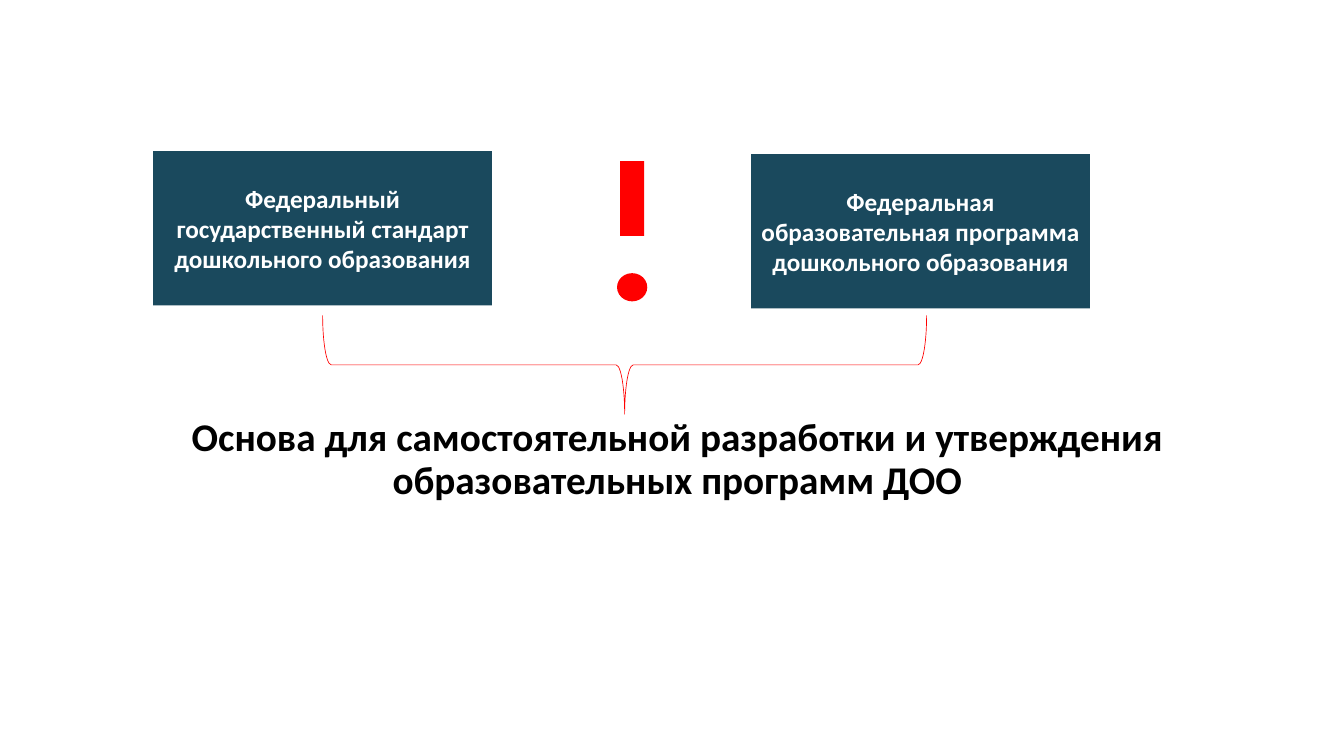
from pptx import Presentation
from pptx.dml.color import RGBColor
from pptx.enum.shapes import MSO_SHAPE as Shape
from pptx.enum.text import MSO_ANCHOR as Anchor, MSO_AUTO_SIZE as AutoSize, PP_ALIGN as Align
from pptx.util import Inches, Pt

# Content
CONCLUSION = ["Основа для самостоятельной разработки и утверждения образовательных программ ДОО"]
DOCUMENTS = [  # left, top, paragraphs
    (1.52, 1.5, ["Федеральный",
                 "государственный стандарт дошкольного образования"]),
    (7.45, 1.53, ["Федеральная",
                  "образовательная программа",
                  "дошкольного образования"]),
]
BOX_WIDTH, BOX_HEIGHT = 3.36, 1.53
EXCLAMATION = [  # preset, left, top, width, height
    (Shape.RECTANGLE, 6.15, 1.6, 0.24, 0.74),
    (Shape.OVAL, 6.12, 2.71, 0.3, 0.28),
]
BRACE_LEFT, BRACE_TOP, BRACE_SPAN, BRACE_DEPTH = 3.2, 3.13, 5.99, 0.98
BRACE_CURVE = 0.085

FONT = "Calibri"
NAVY = RGBColor(0x1A, 0x49, 0x5D)
RED = RGBColor(0xFF, 0x00, 0x00)
WHITE = RGBColor(0xFF, 0xFF, 0xFF)
BLACK = RGBColor(0x00, 0x00, 0x00)


def add_solid(page, preset, left, top, width, height, color):
    shape = page.shapes.add_shape(preset, Inches(left), Inches(top), Inches(width), Inches(height))
    shape.shadow.inherit = False
    shape.fill.solid()
    shape.fill.fore_color.rgb = color
    shape.line.fill.background()
    return shape


def write(shape, lines, size, color, anchor, inset_top=0.0):
    frame = shape.text_frame
    frame.word_wrap = True
    frame.auto_size = AutoSize.NONE
    frame.vertical_anchor = anchor
    frame.margin_left = frame.margin_right = frame.margin_bottom = 0
    frame.margin_top = Inches(inset_top)
    for index, line in enumerate(lines):
        para = frame.paragraphs[0] if index == 0 else frame.add_paragraph()
        para.alignment = Align.CENTER
        span = para.add_run()
        span.text = line
        span.font.name = FONT
        span.font.size = Pt(size)
        span.font.bold = True
        span.font.color.rgb = color
    return frame


deck = Presentation()
deck.slide_width, deck.slide_height = Inches(13.33), Inches(7.5)
page = deck.slides.add_slide(deck.slide_layouts[5])

# Conclusion under the brace
title = page.shapes.title
title.left, title.top = Inches(1.88), Inches(4.07)
title.width, title.height = Inches(9.67), Inches(0.91)
frame = write(title, CONCLUSION, 28, BLACK, Anchor.TOP, 0.07)
frame.paragraphs[0].line_spacing = Pt(30.3)

# Exclamation mark
for part in EXCLAMATION:
    add_solid(page, *part, RED)

# Brace: a right brace turned a quarter so that it points down
center_x = BRACE_LEFT + BRACE_SPAN / 2
center_y = BRACE_TOP + BRACE_DEPTH / 2
brace = page.shapes.add_shape(
    Shape.RIGHT_BRACE,
    Inches(center_x - BRACE_DEPTH / 2), Inches(center_y - BRACE_SPAN / 2),
    Inches(BRACE_DEPTH), Inches(BRACE_SPAN))
brace.rotation = 90
brace.adjustments[0] = BRACE_CURVE / BRACE_DEPTH
brace.shadow.inherit = False
brace.fill.background()
brace.line.color.rgb = RED
brace.line.width = Pt(0.48)

# Document boxes
for left, top, lines in DOCUMENTS:
    box = add_solid(page, Shape.RECTANGLE, left, top, BOX_WIDTH, BOX_HEIGHT, NAVY)
    write(box, lines, 18, WHITE, Anchor.MIDDLE)

deck.save("out.pptx")
